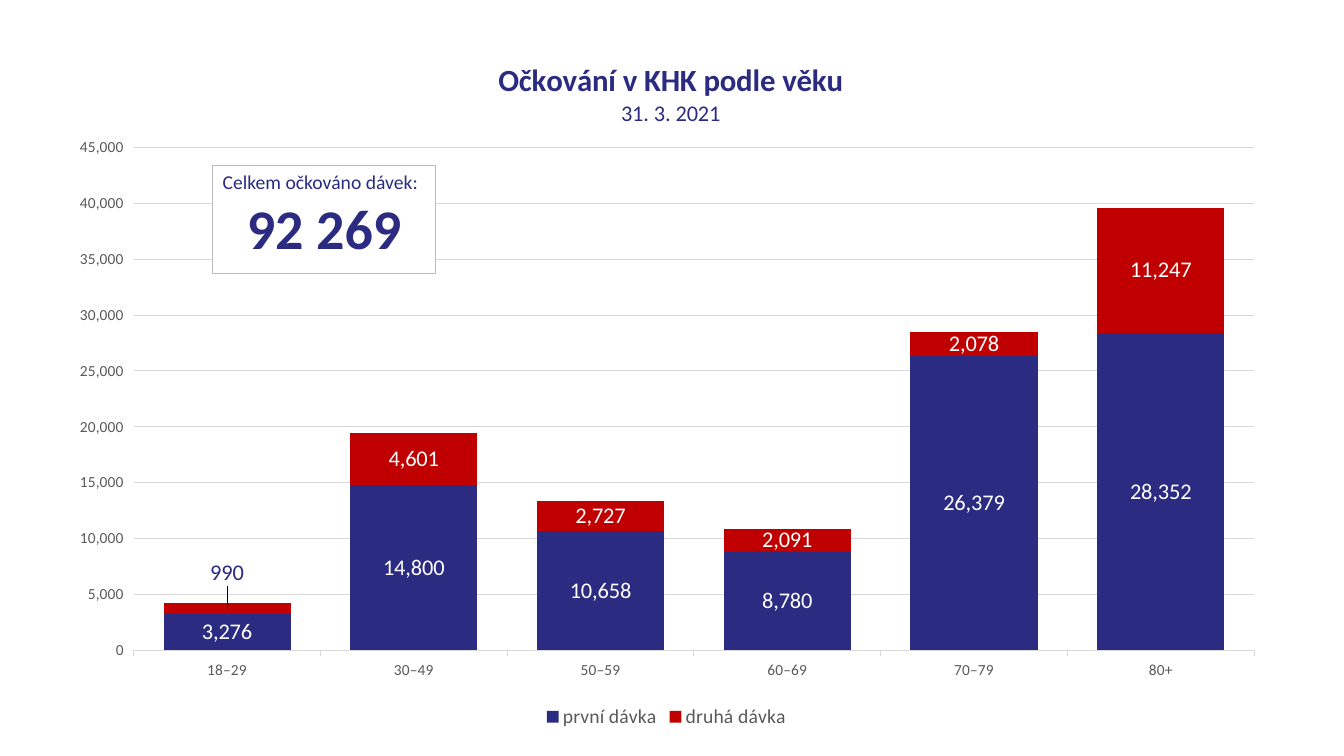
from lxml import etree
from pptx import Presentation
from pptx.chart.data import CategoryChartData
from pptx.dml.color import RGBColor
from pptx.enum.chart import XL_CHART_TYPE, XL_LABEL_POSITION, XL_LEGEND_POSITION, XL_TICK_MARK
from pptx.enum.shapes import MSO_SHAPE
from pptx.enum.text import MSO_ANCHOR, PP_ALIGN
from pptx.oxml.ns import qn
from pptx.util import Inches, Pt

NAVY, RED, WHITE, GRAY, GRID, BORDER = "2B2B82", "C00000", "FFFFFF", "595959", "D9D9D9", "BDBDBD"
NUMBER_FORMAT = r"[$-10409]#,##0;\(#,##0\)"
AGES = ["18–29", "30–49", "50–59", "60–69", "70–79", "80+"]
DOSES = [
    ("první dávka", NAVY, [3276, 14800, 10658, 8780, 26379, 28352]),
    ("druhá dávka", RED, [990, 4601, 2727, 2091, 2078, 11247]),
]


def rgb(color):
    return RGBColor.from_string(color)


def style_font(font, size, color, bold=False):
    font.name, font.size, font.bold = "Calibri", Pt(size), bold
    font.color.rgb = rgb(color)


def style_line(line, color):
    line.color.rgb = rgb(color)
    line.width = Pt(0.75)


def write_lines(tf, lines):
    """Fill a text frame with (text, size, bold, alignment) paragraphs."""
    for i, (text, size, bold, align) in enumerate(lines):
        p = tf.paragraphs[0] if i == 0 else tf.add_paragraph()
        p.text, p.alignment = text, align
        style_font(p.font, size, NAVY, bold)


def place(parent, index, **settings):
    """Give a chart part a manual layout, as fractions of the chart."""
    for old in parent.findall(qn("c:layout")):
        parent.remove(old)
    layout = etree.Element(qn("c:layout"))
    manual = etree.SubElement(layout, qn("c:manualLayout"))
    for name, value in settings.items():
        etree.SubElement(manual, qn(f"c:{name}")).set("val", str(value))
    parent.insert(index, layout)


def style_axes(chart):
    for axis in (chart.category_axis, chart.value_axis):
        axis.major_tick_mark = XL_TICK_MARK.OUTSIDE
        axis.minor_tick_mark = XL_TICK_MARK.NONE
        style_font(axis.tick_labels.font, 11, GRAY)
    style_line(chart.category_axis.format.line, GRID)
    values = chart.value_axis
    values.format.line.fill.background()
    values.minimum_scale, values.maximum_scale, values.major_unit = 0, 45000, 5000
    style_line(values.major_gridlines.format.line, GRID)
    values.tick_labels.number_format = NUMBER_FORMAT
    values.tick_labels.number_format_is_linked = False


def style_series(series, color):
    series.format.fill.solid()
    series.format.fill.fore_color.rgb = rgb(color)
    series.invert_if_negative = False
    labels = series.data_labels
    labels.show_value = True
    labels.position = XL_LABEL_POSITION.CENTER
    labels.number_format = NUMBER_FORMAT
    labels.number_format_is_linked = False
    style_font(labels.font, 16, WHITE)


def lift_first_label(chart, series):
    """Move the label of the thin first segment above its column."""
    label = series.points[0].data_label
    style_font(label.font, 16, NAVY)
    label.position = XL_LABEL_POSITION.CENTER
    place(chart.element.xpath(".//c:dLbl")[0], 1, x=0, y=-0.05)


def add_dose_chart(s):
    data = CategoryChartData()
    data.categories = AGES
    for name, _, values in DOSES:
        data.add_series(name, values)
    chart = s.shapes.add_chart(
        XL_CHART_TYPE.COLUMN_STACKED, Inches(0.55), Inches(0.29), Inches(12.12), Inches(6.98), data
    ).chart
    style_font(chart.font, 10, "000000")

    title = chart.chart_title
    write_lines(title.text_frame, [
        ("Očkování v KHK podle věku", 22, True, PP_ALIGN.CENTER),
        ("31. 3. 2021", 16, False, PP_ALIGN.CENTER),
    ])
    title.include_in_layout = False
    place(title.element, 1, xMode="edge", yMode="edge", x=0.36, y=0.04)

    plot = chart.plots[0]
    plot.gap_width, plot.overlap, plot.vary_by_categories = 47, 100, False
    for series, (_, color, _) in zip(plot.series, DOSES):
        style_series(series, color)
    lift_first_label(chart, plot.series[1])
    style_axes(chart)
    place(chart.element.xpath(".//c:plotArea")[0], 0, layoutTarget="inner",
          xMode="edge", yMode="edge", x=0.064, y=0.168, w=0.917, h=0.715)

    chart.has_legend = True
    chart.legend.position = XL_LEGEND_POSITION.BOTTOM
    chart.legend.include_in_layout = False
    style_font(chart.legend.font, 14, GRAY)


def add_total_box(s):
    sp = s.shapes.add_shape(MSO_SHAPE.RECTANGLE, Inches(2.11), Inches(1.64), Inches(2.21), Inches(1.07))
    sp.shadow.inherit = False
    sp.fill.solid()
    sp.fill.fore_color.rgb = rgb(WHITE)
    style_line(sp.line, BORDER)
    tf = sp.text_frame
    tf.word_wrap = True
    tf.vertical_anchor = MSO_ANCHOR.TOP
    write_lines(tf, [
        ("Celkem očkováno dávek:", 14, False, PP_ALIGN.LEFT),
        ("92 269", 40, True, PP_ALIGN.CENTER),
    ])


def main():
    prs = Presentation()
    prs.slide_width, prs.slide_height = Inches(13.33), Inches(7.5)
    s = prs.slides.add_slide(prs.slide_layouts[6])
    add_dose_chart(s)
    add_total_box(s)
    prs.save("out.pptx")


if __name__ == "__main__":
    main()
